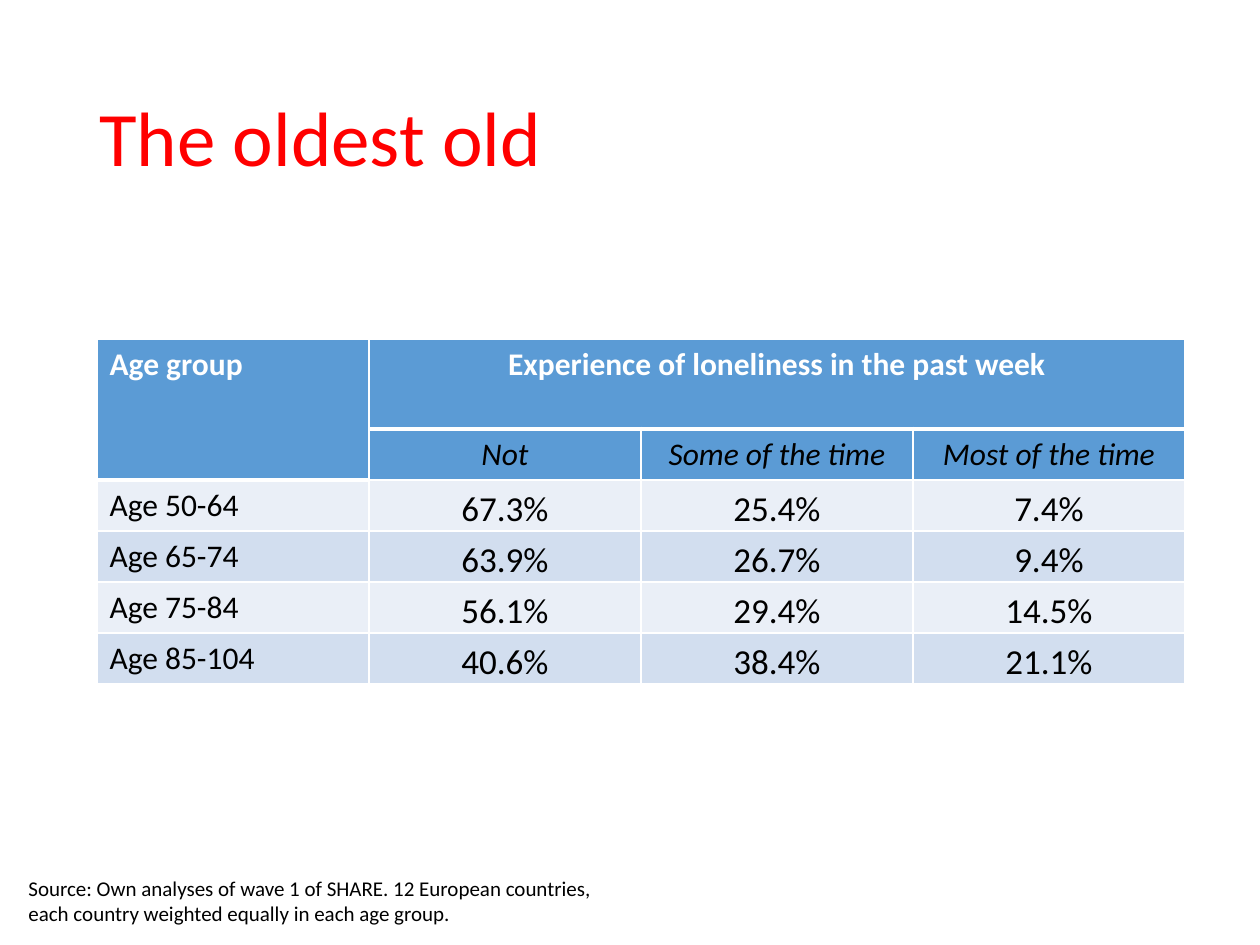
from lxml.etree import SubElement
from pptx import Presentation
from pptx.dml.color import RGBColor
from pptx.enum.text import MSO_ANCHOR as Anchor, PP_ALIGN as Align
from pptx.oxml.ns import qn
from pptx.util import Pt

# Content
TITLE = "The oldest old"
CORNER = "Age group"
SPANNER = "Experience of loneliness in the past week"
ANSWERS = ["Not", "Some of the time", "Most of the time"]
SHARES = [
    ("Age 50-64", "67.3%", "25.4%", "7.4%"),
    ("Age 65-74", "63.9%", "26.7%", "9.4%"),
    ("Age 75-84", "56.1%", "29.4%", "14.5%"),
    ("Age 85-104", "40.6%", "38.4%", "21.1%"),
]
SOURCE = ("Source: Own analyses of wave 1 of SHARE. 12 European countries, "
          "each country weighted equally in each age group.")

COLORS = {"title": "FF0000", "text": "000000", "white": "FFFFFF",
          "header": "5B9BD5", "light": "EAEFF7", "dark": "D2DEEF"}
FONT = "Calibri"

# Layout in px, 126 to the inch
PX = 914400 // 126
TABLE_LEFT, TABLE_TOP = 97, 339
COLUMN_WIDTH = 272
ROW_HEIGHTS = [90] + [51] * 5


def rgb(name):
    return RGBColor.from_string(COLORS[name])


def write(frame, text, size, color="text", align=Align.LEFT, bold=False, italic=False):
    para = frame.paragraphs[0]
    para.text = text
    para.alignment = align
    font = para.font
    font.name, font.size, font.bold, font.italic = FONT, Pt(size), bold, italic
    font.color.rgb = rgb(color)
    return para


def add_text(page, place, text, size, color, anchor):
    box = page.shapes.add_textbox(*(length * PX for length in place))
    box.text_frame.word_wrap = True
    box.text_frame.vertical_anchor = anchor
    return write(box.text_frame, text, size, color)


def set_borders(cell, top, bottom):
    for side, points in (("L", 1), ("R", 1), ("T", top), ("B", bottom)):
        line = SubElement(cell._tc.get_or_add_tcPr(), qn(f"a:ln{side}"), w=str(Pt(points)))
        SubElement(SubElement(line, qn("a:solidFill")), qn("a:srgbClr"), val=COLORS["white"])


def style_cell(cell, row, column):
    # A heavy rule closes the spanning header and the corner cell
    rule_row = 1 if column == 0 else 0
    top = 3 if row == rule_row + 1 else 1
    bottom = 3 if row == rule_row or (row, column) == (0, 0) else 1
    set_borders(cell, top, bottom)
    cell.fill.solid()
    cell.fill.fore_color.rgb = rgb("header" if row < 2 else ("light", "dark")[row % 2])


def add_loneliness_table(page):
    rows, columns = len(ROW_HEIGHTS), len(ANSWERS) + 1
    table = page.shapes.add_table(rows, columns, TABLE_LEFT * PX, TABLE_TOP * PX,
                                  columns * COLUMN_WIDTH * PX, sum(ROW_HEIGHTS) * PX).table
    for column in table.columns:
        column.width = COLUMN_WIDTH * PX
    for row, height in zip(table.rows, ROW_HEIGHTS):
        row.height = height * PX
    for row in range(rows):
        for column in range(columns):
            style_cell(table.cell(row, column), row, column)

    # Headers
    table.cell(0, 0).merge(table.cell(1, 0))
    table.cell(0, 1).merge(table.cell(0, columns - 1))
    write(table.cell(0, 0).text_frame, CORNER, 18, "white", bold=True)
    write(table.cell(0, 1).text_frame, SPANNER, 18, "white", Align.CENTER, bold=True)
    for column, answer in enumerate(ANSWERS, 1):
        write(table.cell(1, column).text_frame, answer, 18, align=Align.CENTER, italic=True)

    # Shares by age group
    for row, (group, *values) in enumerate(SHARES, 2):
        write(table.cell(row, 0).text_frame, group, 18)
        for column, value in enumerate(values, 1):
            cell = table.cell(row, column)
            cell.vertical_anchor = Anchor.BOTTOM
            cell.margin_left = cell.margin_right = cell.margin_top = PX
            cell.margin_bottom = 0
            write(cell.text_frame, value, 20, align=Align.CENTER)


def main():
    deck = Presentation()
    deck.slide_width, deck.slide_height = 1260 * PX, 945 * PX
    page = deck.slides.add_slide(deck.slide_layouts[6])
    title = add_text(page, (87, 50, 1086, 183), TITLE, 44, "title", Anchor.MIDDLE)
    title.line_spacing = 0.9
    add_loneliness_table(page)
    add_text(page, (16, 869, 614, 63), SOURCE, 12, "text", Anchor.TOP)
    deck.save("out.pptx")


if __name__ == "__main__":
    main()
